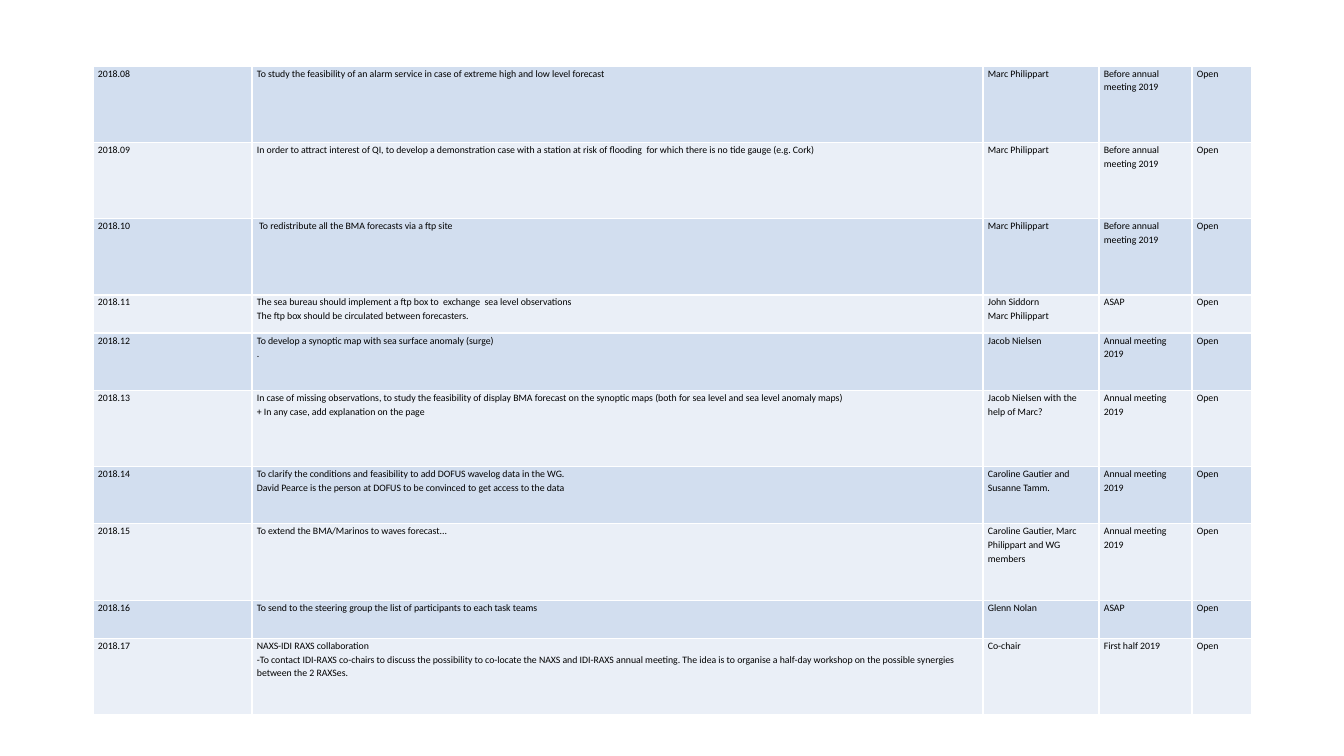
from lxml.etree import SubElement
from pptx import Presentation
from pptx.dml.color import RGBColor
from pptx.oxml.ns import qn
from pptx.util import Emu, Pt

SCALE = 914400 / 100.8  # EMU in one px
COLORS = {"odd": "D2DEEF", "even": "EAEFF7", "border": "FFFFFF", "text": "000000"}
COL_WIDTHS = [159, 731, 116, 93, 60]
TABLE_BOX = (93, 66, sum(COL_WIDTHS), 649)

# Row height in lines, action, people in charge, deadline
ACTIONS = [
    (4, "To study the feasibility of an alarm service in case of extreme high and low level forecast",
     "Marc Philippart", "Before annual meeting 2019"),
    (4, "In order to attract interest of QI, to develop a demonstration case with a station "
        "at risk of flooding  for which there is no tide gauge (e.g. Cork)",
     "Marc Philippart", "Before annual meeting 2019"),
    (4, " To redistribute all the BMA forecasts via a ftp site",
     "Marc Philippart", "Before annual meeting 2019"),
    (2, "The sea bureau should implement a ftp box to  exchange  sea level observations\n"
        "The ftp box should be circulated between forecasters.",
     "John Siddorn\nMarc Philippart", "ASAP"),
    (3, "To develop a synoptic map with sea surface anomaly (surge)\n.",
     "Jacob Nielsen", "Annual meeting 2019"),
    (4, "In case of missing observations, to study the feasibility of display BMA forecast on "
        "the synoptic maps (both for sea level and sea level anomaly maps)\n"
        "+ In any case, add explanation on the page",
     "Jacob Nielsen with the help of Marc?", "Annual meeting 2019"),
    (3, "To clarify the conditions and feasibility to add DOFUS wavelog data in the WG.\n"
        "David Pearce is the person at DOFUS to be convinced to get access to the data",
     "Caroline Gautier and Susanne Tamm.", "Annual meeting 2019"),
    (4, "To extend the BMA/Marinos to waves forecast...",
     "Caroline Gautier, Marc Philippart and WG members", "Annual meeting 2019"),
    (2, "To send to the steering group the list of participants to each task teams",
     "Glenn Nolan", "ASAP"),
    (4, "NAXS-IDI RAXS collaboration\n"
        "-To contact IDI-RAXS co-chairs to discuss the possibility to co-locate the NAXS and "
        "IDI-RAXS annual meeting. The idea is to organise a half-day workshop on the possible "
        "synergies between the 2 RAXSes.",
     "Co-chair", "First half 2019"),
]


def px(n):
    return Emu(round(n * SCALE))


def rgb(name):
    return RGBColor.from_string(COLORS[name])


def set_borders(cell):
    tc_pr = cell._tc.get_or_add_tcPr()
    for i, side in enumerate(("a:lnL", "a:lnR", "a:lnT", "a:lnB")):
        ln = tc_pr.makeelement(qn(side), {"w": str(Pt(1))})
        fill = SubElement(ln, qn("a:solidFill"))
        SubElement(fill, qn("a:srgbClr"), val=COLORS["border"])
        tc_pr.insert(i, ln)  # borders precede the fill


def fill_cell(cell, text, band):
    cell.margin_left = cell.margin_right = px(5)
    cell.margin_top = cell.margin_bottom = 0
    cell.fill.solid()
    cell.fill.fore_color.rgb = rgb(band)
    set_borders(cell)
    tf = cell.text_frame
    tf.text = text
    for p in tf.paragraphs:
        p.line_spacing = 1.15
        p.font.name = "Calibri"
        p.font.size = Pt(7)
        p.font.color.rgb = rgb("text")


def add_action_table(slide, box):
    left, top, width, height = box
    table = slide.shapes.add_table(len(ACTIONS), len(COL_WIDTHS), px(left), px(top),
                                   px(width), px(height)).table
    table.first_row = table.horz_banding = False
    for col, col_width in zip(table.columns, COL_WIDTHS):
        col.width = px(col_width)

    # Rows share the height by their number of lines
    line = height / sum(action[0] for action in ACTIONS)
    for i, (lines, *texts) in enumerate(ACTIONS):
        table.rows[i].height = px(lines * line)
        band = "even" if i % 2 else "odd"
        for j, text in enumerate([f"2018.{i + 8:02d}", *texts, "Open"]):
            fill_cell(table.cell(i, j), text, band)


def main():
    prs = Presentation()
    prs.slide_width, prs.slide_height = px(1344), px(756)
    slide = prs.slides.add_slide(prs.slide_layouts[6])
    add_action_table(slide, TABLE_BOX)
    prs.save("out.pptx")


if __name__ == "__main__":
    main()
